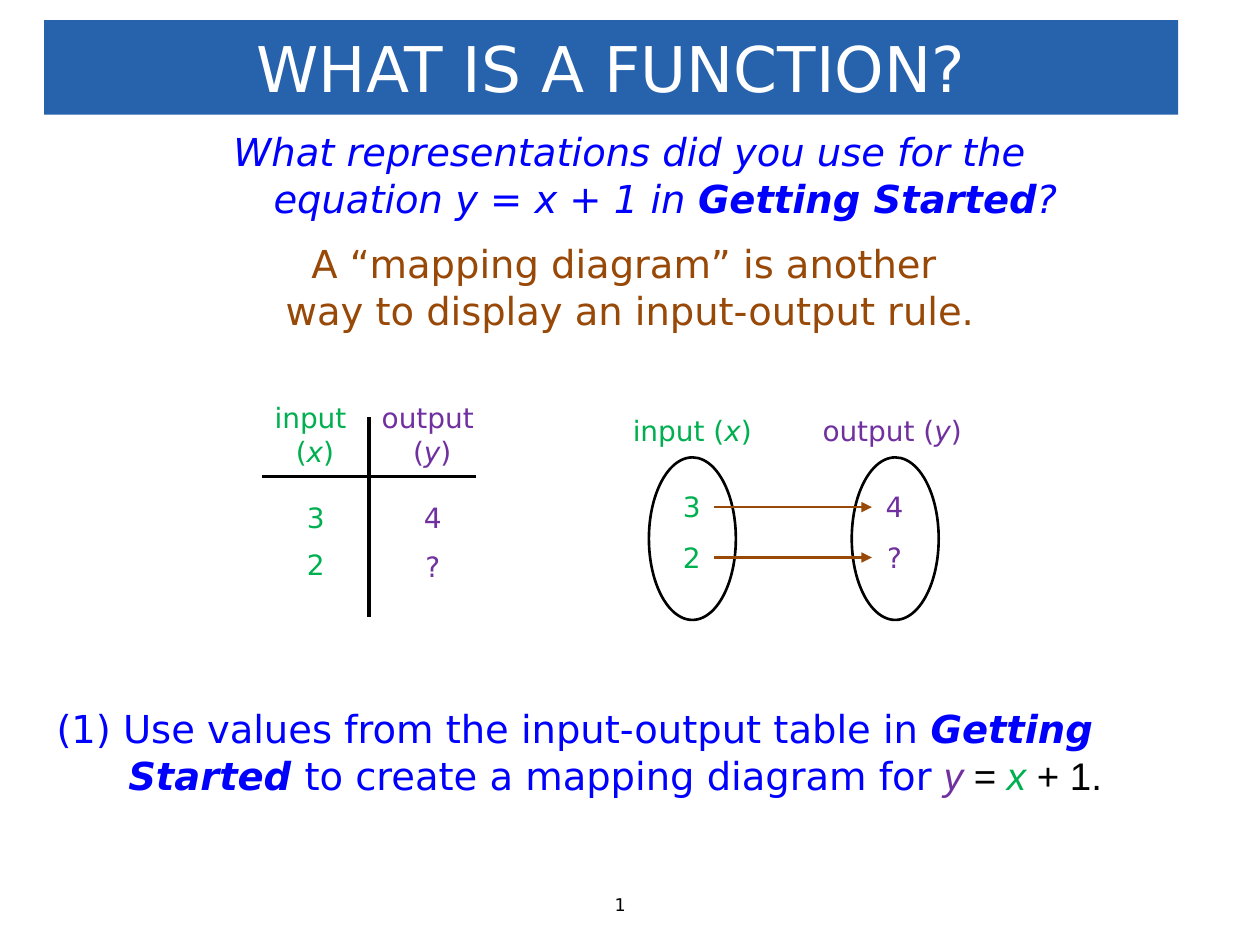
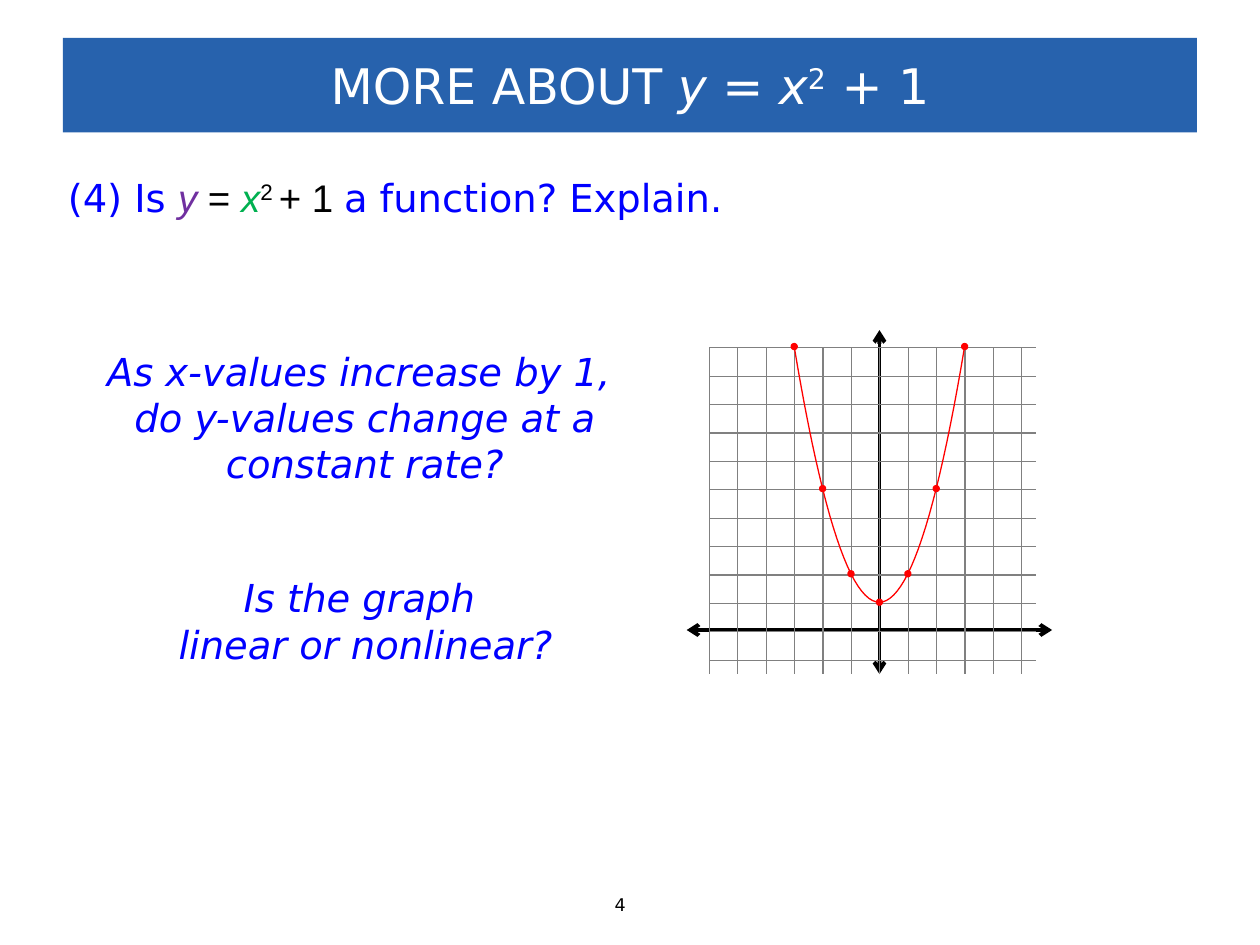
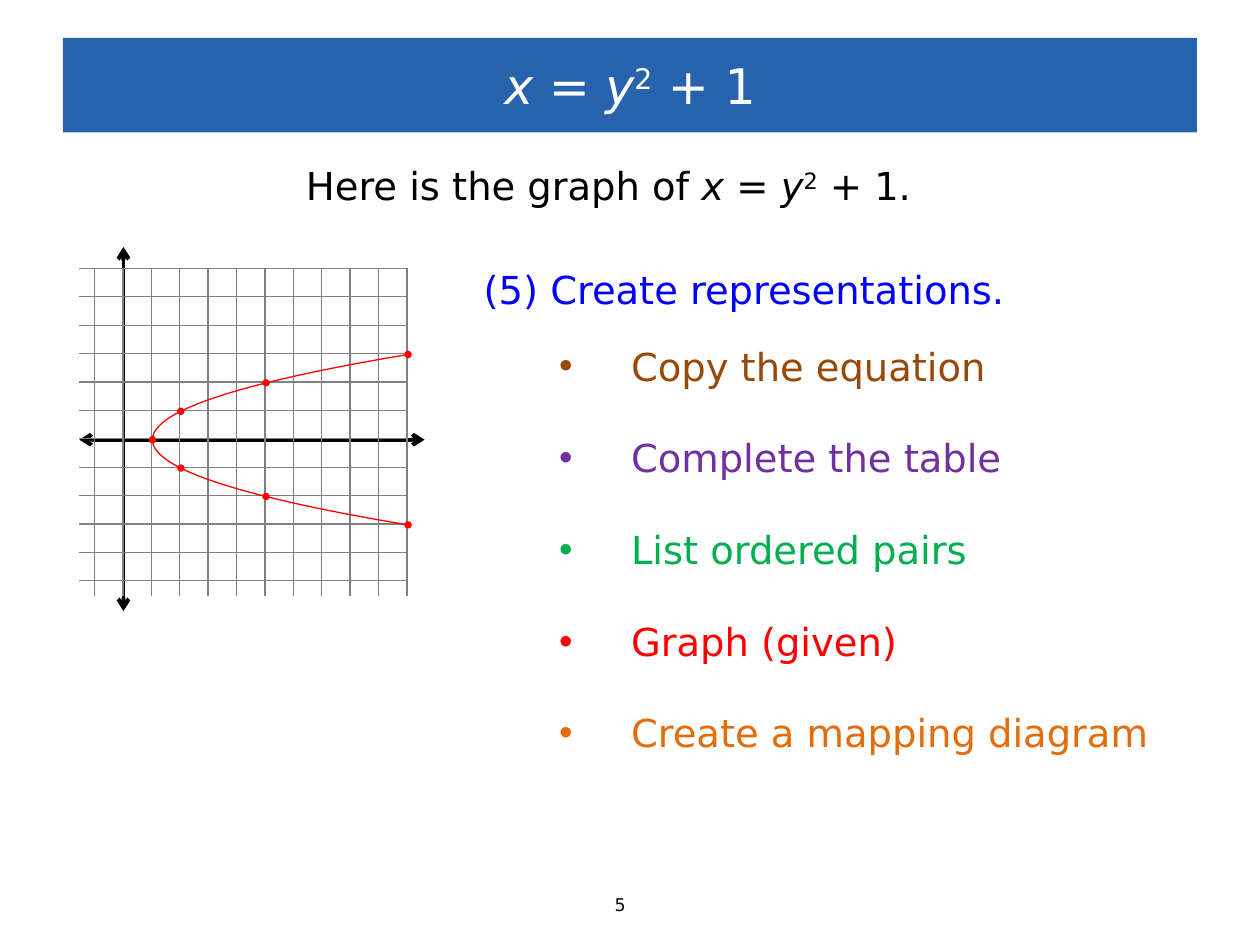
from dataclasses import dataclass
from typing import NamedTuple, Optional

from lxml.etree import SubElement
from pptx import Presentation
from pptx.dml.color import RGBColor
from pptx.enum.shapes import MSO_CONNECTOR as Link, MSO_SHAPE as Preset
from pptx.enum.text import MSO_ANCHOR as Anchor, MSO_AUTO_SIZE as Fit, PP_ALIGN as Align
from pptx.oxml.ns import qn
from pptx.util import Pt

EMU_PER_PX = 9144  # 100 px to the inch
COLORS = {
    "band": "2762AD", "white": "FFFFFF", "black": "000000", "question": "0000FF",
    "note": "984807", "input": "00B050", "output": "7030A0", "grid": "808080",
    "curve": "FF0000", "mapping": "E46C0A",
}
BODY_FONT, MATH_FONT = "DejaVu Sans", "Arial"
HANG = 57
GRID_LINES = 12
PITCH = 248 / (GRID_LINES - 1)


class Run(NamedTuple):
    words: str
    color: Optional[str] = None
    italic: Optional[bool] = None
    bold: bool = False
    raised: bool = False
    font: str = BODY_FONT


class Box(NamedTuple):
    left: int
    top: int
    width: int
    height: int


class Point(NamedTuple):
    x: float
    y: float


class Label(NamedTuple):
    box: Box
    color: str
    paragraphs: list
    align: Align = Align.CENTER


@dataclass
class Graph:
    axes: list[tuple[Point, Point]]
    frame: Box
    first_column: int
    first_row: int
    vertex: Point
    sideways: bool = False

    def at(self, step: float) -> Point:
        """Point of the parabola, a number of grid steps from its vertex."""
        along, away = step * PITCH, step * step * PITCH
        if self.sideways:
            return Point(self.vertex.x + away, self.vertex.y + along)
        return Point(self.vertex.x + along, self.vertex.y - away)


def px(length: float) -> int:
    return round(length * EMU_PER_PX)


def rgb(name: str) -> RGBColor:
    return RGBColor.from_string(COLORS[name])


def write(frame, paragraphs, *, size=22, color="question", italic=False,
          align=Align.LEFT, hang=0, bullet="", gap=0) -> None:
    """Fill a text frame; each paragraph is a string or a list of runs."""
    for index, content in enumerate(paragraphs):
        paragraph = frame.add_paragraph() if index else frame.paragraphs[0]
        paragraph.alignment = align
        if index and gap:
            paragraph.space_before = Pt(gap)
        properties = paragraph._p.get_or_add_pPr()
        if hang:
            properties.set("marL", str(px(hang)))
            properties.set("indent", str(-px(hang)))
        if bullet:
            SubElement(properties, qn("a:buFont")).set("typeface", MATH_FONT)
            SubElement(properties, qn("a:buChar")).set("char", bullet)
        for part in [Run(content)] if isinstance(content, str) else content:
            run = paragraph.add_run()
            run.text = part.words
            run.font.size = Pt(size)
            run.font.name = part.font
            run.font.bold = part.bold
            run.font.italic = italic if part.italic is None else part.italic
            run.font.color.rgb = rgb(part.color or color)
            if part.raised:
                run._r.get_or_add_rPr().set("baseline", "30000")


def add_text(slide, box: Box, paragraphs, *, wrap=True, **style):
    holder = slide.shapes.add_textbox(*map(px, box))
    holder.text_frame.word_wrap = wrap
    holder.text_frame.auto_size = Fit.SHAPE_TO_FIT_TEXT
    write(holder.text_frame, paragraphs, **style)
    return holder


def paint(shape, fill: Optional[str], line: Optional[str] = None, width: float = 1):
    shape.shadow.inherit = False
    if fill:
        shape.fill.solid()
        shape.fill.fore_color.rgb = rgb(fill)
    else:
        shape.fill.background()
    if line:
        shape.line.color.rgb = rgb(line)
        shape.line.width = Pt(width)
    else:
        shape.line.fill.background()
    return shape


def add_line(slide, start: Point, end: Point, color: str, width: float,
             head: str = "", tail: str = ""):
    line = slide.shapes.add_connector(Link.STRAIGHT, *map(px, (*start, *end)))
    line.line.color.rgb = rgb(color)
    line.line.width = Pt(width)
    outline = line.line._get_or_add_ln()
    for tag, arrow in (("a:headEnd", head), ("a:tailEnd", tail)):
        if arrow:
            SubElement(outline, qn(tag)).set("type", arrow)
    SubElement(line._element.spPr, qn("a:effectLst"))
    return line


def add_page(deck, number: str, title: list, *, band=Box(50, 30, 900, 75), size=28):
    """Blank slide with the title band and page number."""
    slide = deck.slides.add_slide(deck.slide_layouts[6])
    add_text(slide, Box(478, 705, 44, 27), [number], wrap=False, size=10, color="black")
    header = paint(slide.shapes.add_shape(Preset.RECTANGLE, *map(px, band)), "band")
    header.text_frame.word_wrap = True
    header.text_frame.vertical_anchor = Anchor.MIDDLE
    write(header.text_frame, [title], size=size, color="white", align=Align.CENTER)
    return slide


def add_graph(slide, graph: Graph) -> None:
    for start, end in graph.axes:
        add_line(slide, start, end, "black", 2.25, head="arrow", tail="arrow")
    left, top, width, height = graph.frame
    for index in range(GRID_LINES):
        x = graph.first_column + index * PITCH
        y = graph.first_row + index * PITCH
        add_line(slide, Point(left, y), Point(left + width, y), "grid", 0.75)
        add_line(slide, Point(x, top), Point(x, top + height), "grid", 0.75)

    # Parabola and its whole-number points
    trace = [tuple(map(px, graph.at(step / 8))) for step in range(-24, 25)]
    builder = slide.shapes.build_freeform(*trace[0], scale=1.0)
    builder.add_line_segments(trace[1:], close=False)
    paint(builder.convert_to_shape(), None, "curve", 0.75)
    for step in range(-3, 4):
        x, y = graph.at(step)
        dot = slide.shapes.add_shape(Preset.OVAL, *map(px, (x - 1.5, y - 1.5, 3, 3)))
        paint(dot, "curve", "curve", 2)


def variable_label(word: str, variable: str) -> list[Run]:
    return [Run(f"{word}("), Run(variable, italic=True), Run(")")]


def math(words: str, color: str = "black", raised: bool = False) -> Run:
    return Run(words, color, italic=color != "black", raised=raised, font=MATH_FONT)


def square_equation(left: str, right: str, end: str = " + 1") -> list[Run]:
    return [Run(left, italic=True), Run(" = "), Run(right, italic=True),
            Run("2", raised=True), Run(end)]


def add_labels(slide, labels: list[Label]) -> list:
    return [add_text(slide, label.box, label.paragraphs, size=16,
                     color=label.color, align=label.align) for label in labels]


def function_page(deck) -> None:
    slide = add_page(deck, "1", [Run("WHAT IS A FUNCTION?")],
                     band=Box(35, 16, 900, 75), size=36)
    add_text(slide, Box(120, 97, 759, 84), [[
        Run("What representations did you use for the equation y = x + 1 in "),
        Run("Getting Started", bold=True), Run("?")]],
        italic=True, align=Align.CENTER, hang=HANG)
    add_text(slide, Box(35, 555, 908, 84), [[
        Run("(1) Use values from the input-output table in "),
        Run("Getting Started ", bold=True, italic=True),
        Run("to create a mapping diagram for "),
        math("y ", "output"), math("= "), math("x ", "input"), math("+ 1.")]], hang=HANG)
    add_text(slide, Box(205, 186, 590, 84),
             ["A “mapping diagram” is another ", "way to display an input-output rule."],
             color="note", align=Align.CENTER, hang=HANG)

    # Input-output table drawn as a T
    add_line(slide, Point(293, 331), Point(293, 490), "black", 2)
    add_line(slide, Point(378, 378), Point(208, 378), "black", 2)
    add_labels(slide, [
        Label(Box(205, 313, 90, 64), "input", ["input ", variable_label("", "x")]),
        Label(Box(292, 313, 102, 64), "output", ["output ", variable_label("", "y")]),
        Label(Box(231, 392, 39, 37), "input", ["3"]),
        Label(Box(231, 430, 39, 37), "input", ["2"]),
        Label(Box(324, 392, 39, 37), "output", ["4"]),
        Label(Box(324, 431, 39, 37), "output", ["?"]),
    ])

    # Mapping diagram
    add_labels(slide, [
        Label(Box(488, 323, 123, 37), "input", [variable_label("input ", "x")]),
        Label(Box(643, 323, 134, 37), "output", [variable_label("output ", "y")], Align.LEFT),
    ])
    for left in (515, 676):
        oval = slide.shapes.add_shape(Preset.OVAL, *map(px, (left, 363, 69, 129)))
        paint(oval, None, "black", 1.5)
    for top, given, result in ((384, "3", "4"), (424, "2", "?")):
        source, target = add_labels(slide, [
            Label(Box(531, top, 36, 37), "input", [given]),
            Label(Box(692, top, 36, 37), "output", [result]),
        ])
        arrow = add_line(slide, Point(567, top + 18), Point(692, top + 18),
                         "note", 1.5, tail="triangle")
        arrow.begin_connect(source, 3)
        arrow.end_connect(target, 1)


def parabola_page(deck) -> None:
    slide = add_page(deck, "4", [Run("MORE ABOUT "), *square_equation("y", "x")])
    add_text(slide, Box(44, 133, 566, 47), [[
        Run("(4) Is "), math("y ", "output"), math("= "), math("x", "input"),
        math("2 ", raised=True), math("+ 1 "), Run("a function? Explain.")]], hang=HANG)
    add_text(slide, Box(74, 271, 431, 121),
             ["As x-values increase by 1, ", "do y-values change at a constant rate?"],
             italic=True, align=Align.CENTER)
    add_text(slide, Box(129, 451, 322, 84), ["Is the graph ", "linear or nonlinear?"],
             italic=True, align=Align.CENTER)
    add_graph(slide, Graph(
        axes=[(Point(698, 262), Point(698, 535)), (Point(835, 500), Point(545, 500))],
        frame=Box(563, 276, 259, 259), first_column=563, first_row=276,
        vertex=Point(698, 478)))


def sideways_page(deck) -> None:
    slide = add_page(deck, "5", square_equation("x", "y"))
    add_text(slide, Box(233, 124, 512, 47),
             [[Run("Here is the graph of "), *square_equation("x", "y", " + 1.")]],
             color="black")
    add_graph(slide, Graph(
        axes=[(Point(337, 349), Point(63, 349)), (Point(98, 485), Point(98, 196))],
        frame=Box(63, 213, 260, 260), first_column=75, first_row=213,
        vertex=Point(121, 349), sideways=True))
    add_text(slide, Box(374, 206, 448, 47), ["(5) Create representations."], hang=HANG)
    tasks = [("Copy the equation", "note"), ("Complete the table", "output"),
             ("List ordered pairs", "input"), ("Graph (given)", "curve"),
             ("Create a mapping diagram", "mapping")]
    add_text(slide, Box(434, 267, 493, 343), [[Run(*task)] for task in tasks],
             hang=HANG, bullet="•", gap=26)


def main() -> None:
    deck = Presentation()
    deck.slide_width, deck.slide_height = px(1000), px(750)
    for build in (function_page, parabola_page, sideways_page):
        build(deck)
    deck.save("out.pptx")


if __name__ == "__main__":
    main()
